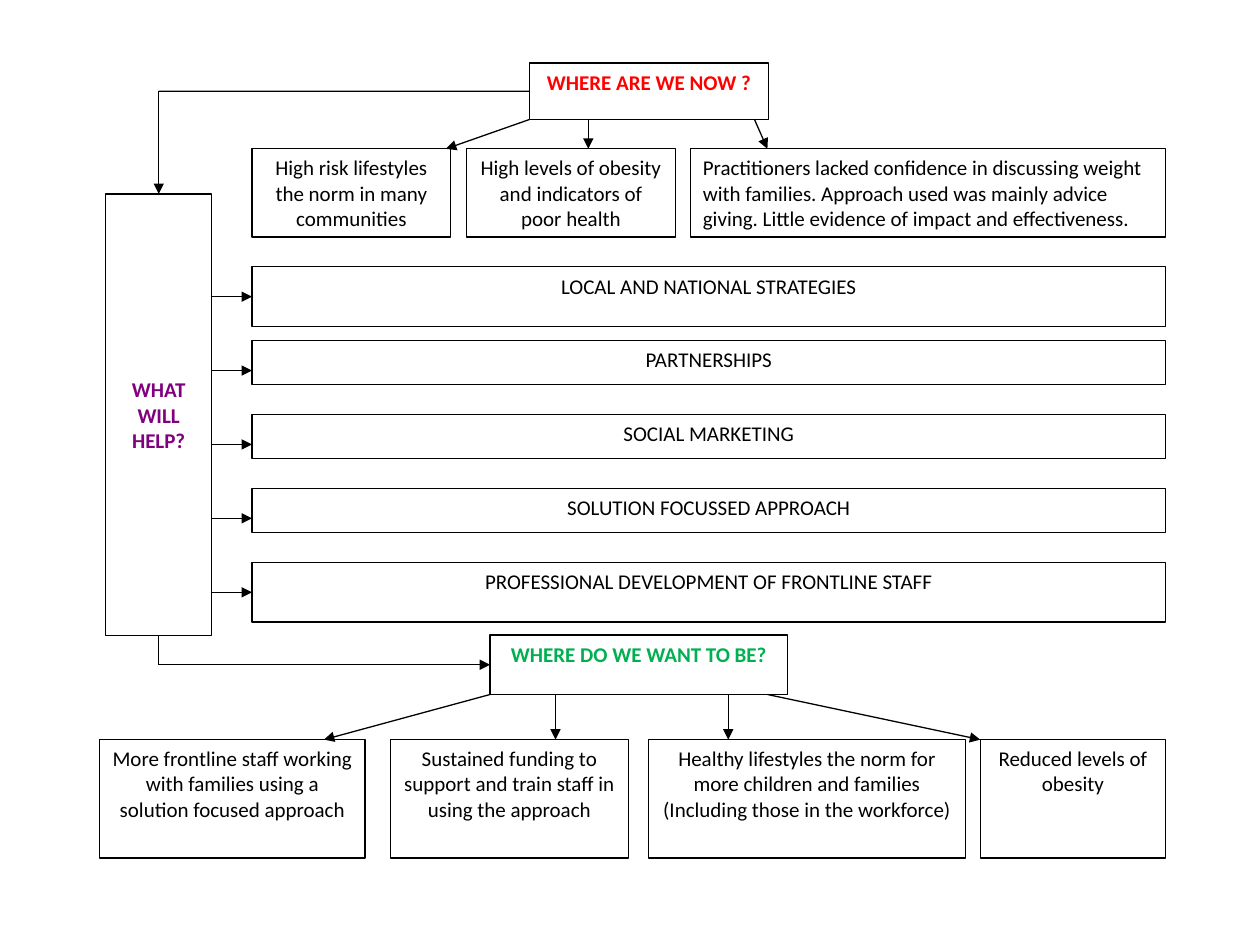
from dataclasses import dataclass

import lxml.etree
import pptx
import pptx.dml.color
import pptx.enum.shapes
import pptx.enum.text
import pptx.oxml.ns
import pptx.util

Cm = pptx.util.Cm
ALIGN = pptx.enum.text.PP_ALIGN
ANCHOR = pptx.enum.text.MSO_ANCHOR
TOP, LEFT, BOTTOM, RIGHT = range(4)


@dataclass(frozen=True)
class Theme:
    font: str = "Calibri"
    text_size: float = 12
    line_width: float = 0.75
    ink: str = "000000"
    paper: str = "FFFFFF"
    now: str = "FF0000"
    help: str = "800080"
    goal: str = "00B050"


def rgb(code):
    return pptx.dml.color.RGBColor.from_string(code)


class Diagram:
    def __init__(self, slide, theme):
        self.slide = slide
        self.theme = theme

    def outline(self, line):
        line.color.rgb = rgb(self.theme.ink)
        line.width = pptx.util.Pt(self.theme.line_width)

    def box(self, left, top, width, height, *paragraphs, heading=None,
            align=ALIGN.CENTER, anchor=ANCHOR.TOP):
        shape = self.slide.shapes.add_shape(
            pptx.enum.shapes.MSO_SHAPE.RECTANGLE,
            Cm(left), Cm(top), Cm(width), Cm(height))
        shape.shadow.inherit = False
        shape.fill.solid()
        shape.fill.fore_color.rgb = rgb(self.theme.paper)
        self.outline(shape.line)
        frame = shape.text_frame
        frame.word_wrap = True
        frame.vertical_anchor = anchor
        frame.text = "\n".join(paragraphs)
        for paragraph in frame.paragraphs:
            paragraph.alignment = align
            paragraph.font.name = self.theme.font
            paragraph.font.size = pptx.util.Pt(self.theme.text_size)
            paragraph.font.bold = heading is not None
            paragraph.font.color.rgb = rgb(heading or self.theme.ink)
        return shape

    def line(self, start, end, arrow=True, leaves=None, enters=None):
        connector = self.slide.shapes.add_connector(
            pptx.enum.shapes.MSO_CONNECTOR.STRAIGHT,
            *(Cm(value) for value in (*start, *end)))
        if leaves:
            connector.begin_connect(*leaves)
        if enters:
            connector.end_connect(*enters)
        self.outline(connector.line)
        qn = pptx.oxml.ns.qn
        if arrow:
            lxml.etree.SubElement(
                connector.line._get_or_add_ln(), qn("a:tailEnd"), type="triangle")
        lxml.etree.SubElement(connector._element.spPr, qn("a:effectLst"))


def draw_now(diagram):
    now = diagram.box(10.67, 1.27, 4.83, 1.14, "WHERE ARE WE NOW ?",
                      heading=diagram.theme.now)
    top, height = 3, 1.78
    findings = [
        (5.08, 4.01, "High risk lifestyles the norm in many communities", ALIGN.CENTER),
        (9.4, 4.22, "High levels of obesity and indicators of poor health", ALIGN.CENTER),
        (13.92, 9.58, "Practitioners lacked confidence in discussing weight with "
         "families. Approach used was mainly advice giving. Little evidence of "
         "impact and effectiveness.", ALIGN.LEFT),
    ]
    for left, width, finding, align in findings:
        diagram.box(left, top, width, height, finding, align=align)
    for start_x, end_x in [(10.67, 8.99), (11.86, 11.86), (15.21, 15.47)]:
        diagram.line((start_x, 2.41), (end_x, top))
    return now


def draw_help(diagram):
    help_box = diagram.box(2.13, 3.91, 2.14, 8.9, "WHAT WILL HELP?",
                           heading=diagram.theme.help, anchor=ANCHOR.MIDDLE)
    first_top, pitch, tall, short = 5.38, 1.49, 1.2, 0.89
    measures = [
        ("LOCAL AND NATIONAL STRATEGIES", tall),
        ("PARTNERSHIPS", short),
        ("SOCIAL MARKETING", short),
        ("SOLUTION FOCUSSED APPROACH", short),
        ("PROFESSIONAL DEVELOPMENT OF FRONTLINE STAFF", tall),
    ]
    for row, (measure, height) in enumerate(measures):
        top = first_top + row * pitch
        bar = diagram.box(5.08, top, 18.42, height, measure)
        arrow_y = top + tall / 2
        diagram.line((4.27, arrow_y), (5.08, arrow_y),
                     enters=(bar, LEFT) if height == tall else None)
    return help_box


def draw_goal(diagram):
    goal = diagram.box(9.88, 12.8, 6, 1.2, "WHERE DO WE WANT TO BE?",
                       heading=diagram.theme.goal)
    top, height = 14.91, 2.39
    outcomes = [
        (2.01, 5.35, ["More frontline staff working with families using a "
                      "solution focused approach"]),
        (7.87, 4.8, ["Sustained funding to support and train staff in using "
                     "the approach"]),
        (13.08, 6.38, ["Healthy lifestyles the norm for more children and families",
                       "(Including those in the workforce)"]),
        (19.76, 3.74, ["Reduced levels of obesity"]),
    ]
    for left, width, outcome in outcomes:
        diagram.box(left, top, width, height, *outcome)
    for start_x, end_x in [(9.88, 6.53), (11.2, 11.2), (14.68, 14.68), (15.47, 19.76)]:
        diagram.line((start_x, 14), (end_x, top))
    return goal


def main():
    deck = pptx.Presentation()
    deck.slide_width, deck.slide_height = Cm(25.4), Cm(19.05)
    diagram = Diagram(deck.slides.add_slide(deck.slide_layouts[6]), Theme())

    now = draw_now(diagram)
    help_box = draw_help(diagram)
    goal = draw_goal(diagram)

    upper_corner, lower_corner = (3.2, 1.84), (3.2, 13.4)
    diagram.line((10.67, 1.84), upper_corner, arrow=False, leaves=(now, LEFT))
    diagram.line(upper_corner, (3.2, 3.91), enters=(help_box, TOP))
    diagram.line((3.2, 12.81), lower_corner, arrow=False, leaves=(help_box, BOTTOM))
    diagram.line(lower_corner, (9.88, 13.4), enters=(goal, LEFT))

    deck.save("out.pptx")


if __name__ == "__main__":
    main()
